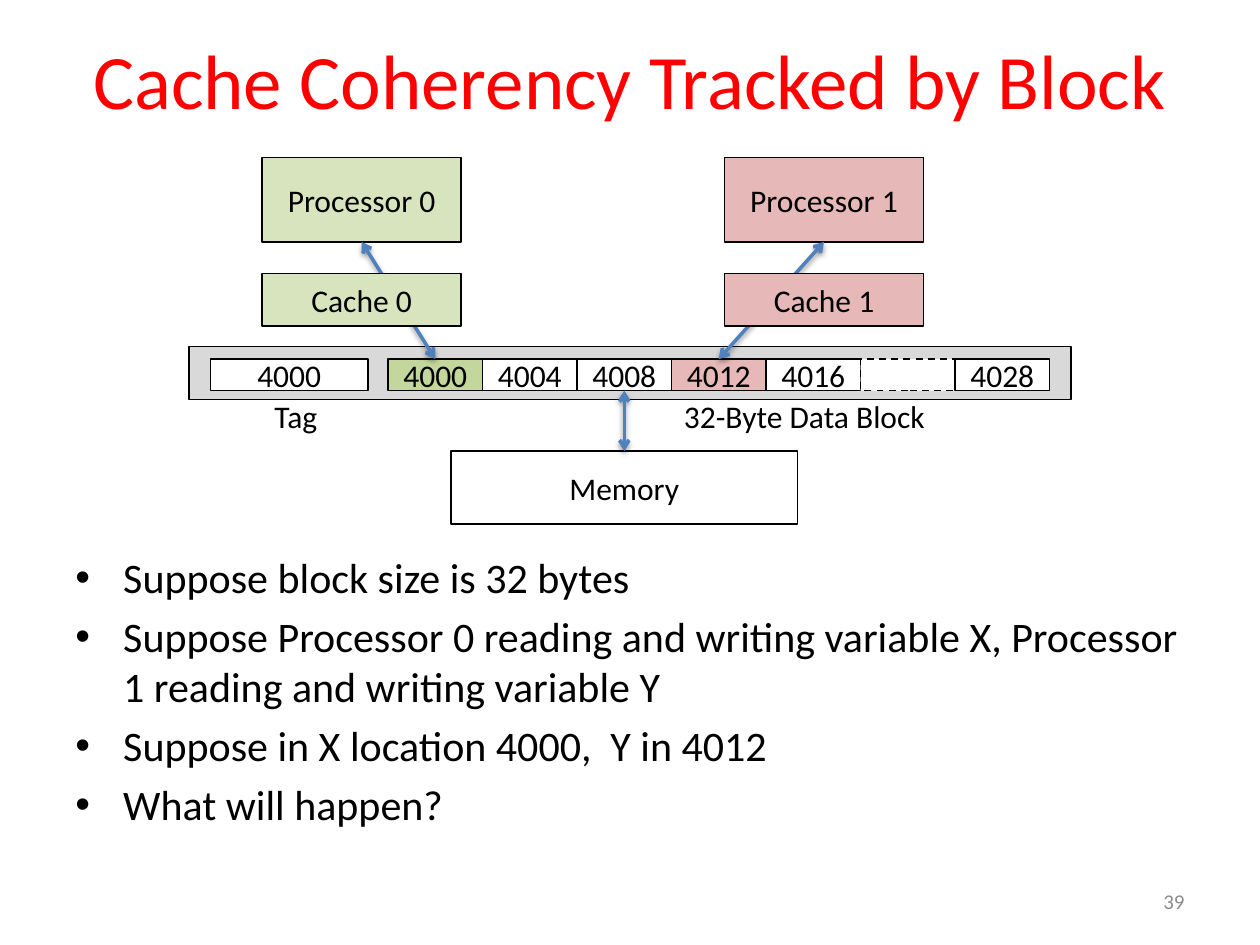
from dataclasses import dataclass
from typing import Optional

from lxml import etree
from pptx import Presentation
from pptx import util as u
from pptx.dml.color import RGBColor
from pptx.enum import dml, shapes, text
from pptx.oxml import parse_xml
from pptx.oxml.ns import nsdecls, qn


@dataclass(frozen=True)
class Theme:
    font: str = "Calibri"
    title_size: int = 44
    body_size: int = 24
    label_size: int = 18
    number_size: int = 12
    title: str = "FF0000"
    ink: str = "000000"
    number: str = "8C8C8C"
    paper: str = "FFFFFF"
    block: str = "D9D9D9"
    green: str = "D7E4BD"
    dark_green: str = "C3D69B"
    red: str = "E6B9B8"
    arrow: str = "4F81BD"


@dataclass(frozen=True)
class Box:
    left: float
    top: float
    width: float
    height: float
    fill: str
    label: str = ""
    dashed: bool = False


@dataclass(frozen=True)
class Label:
    left: float
    top: float
    width: float
    height: float
    lines: tuple[str, ...]
    size: int
    color: str
    align: text.PP_ALIGN = text.PP_ALIGN.LEFT
    anchor: text.MSO_ANCHOR = text.MSO_ANCHOR.TOP
    wrap: bool = True
    bullets: bool = False


@dataclass(frozen=True)
class Arrow:
    x1: float
    y1: float
    x2: float
    y2: float


THEME = Theme()
CORE_LEFTS = (2.08, 5.75)
CORE_FILLS = (THEME.green, THEME.red)
CORE_WIDTH = 1.58
PROCESSOR_TOP, PROCESSOR_HEIGHT = 1.25, 0.67
WORD_LEFT, WORD_TOP, WORD_WIDTH, WORD_HEIGHT = 3.08, 2.85, 0.75, 0.25
WORDS = ("4000", "4004", "4008", "4012", "4016", "", "4028")
WORD_FILLS = {"4000": THEME.dark_green, "4012": THEME.red}
SHARED_WORDS = (0, 3)
MEMORY_TOP = 3.58
BULLETS = (
    "Suppose block size is 32 bytes",
    "Suppose Processor 0 reading and writing variable X, Processor 1 reading and writing variable Y",
    "Suppose in X location 4000,  Y in 4012",
    "What will happen?",
)


def add_run(paragraph, content: str, size: int, color: str) -> None:
    run = paragraph.add_run()
    run.text = content
    run.font.name = THEME.font
    run.font.size = u.Pt(size)
    run.font.color.rgb = RGBColor.from_string(color)


def add_bullet(paragraph) -> None:
    properties = paragraph._p.get_or_add_pPr()
    properties.set("marL", str(u.Inches(0.38)))
    properties.set("indent", str(u.Inches(-0.38)))
    spacing = etree.SubElement(properties, qn("a:spcBef"))
    etree.SubElement(spacing, qn("a:spcPct"), val="20000")
    etree.SubElement(properties, qn("a:buFont"), typeface="Arial")
    etree.SubElement(properties, qn("a:buChar"), char="•")


def draw_box(slide, box: Box) -> None:
    shape = slide.shapes.add_shape(
        shapes.MSO_SHAPE.RECTANGLE,
        u.Inches(box.left), u.Inches(box.top), u.Inches(box.width), u.Inches(box.height),
    )
    shape.shadow.inherit = False
    shape.fill.solid()
    shape.fill.fore_color.rgb = RGBColor.from_string(box.fill)
    shape.line.color.rgb = RGBColor.from_string(THEME.ink)
    shape.line.width = u.Pt(1)
    if box.dashed:
        shape.line.dash_style = dml.MSO_LINE.DASH
    if box.label:
        shape.text_frame.vertical_anchor = text.MSO_ANCHOR.MIDDLE
        paragraph = shape.text_frame.paragraphs[0]
        paragraph.alignment = text.PP_ALIGN.CENTER
        add_run(paragraph, box.label, THEME.label_size, THEME.ink)


def draw_label(slide, label: Label) -> None:
    shape = slide.shapes.add_textbox(
        u.Inches(label.left), u.Inches(label.top), u.Inches(label.width), u.Inches(label.height)
    )
    frame = shape.text_frame
    frame.word_wrap = label.wrap
    frame.vertical_anchor = label.anchor
    for index, line in enumerate(label.lines):
        paragraph = frame.add_paragraph() if index else frame.paragraphs[0]
        paragraph.alignment = label.align
        if label.bullets:
            add_bullet(paragraph)
        add_run(paragraph, line, label.size, label.color)


def draw_arrow(slide, arrow: Arrow) -> None:
    connector = slide.shapes.add_connector(
        shapes.MSO_CONNECTOR.STRAIGHT,
        u.Inches(arrow.x1), u.Inches(arrow.y1), u.Inches(arrow.x2), u.Inches(arrow.y2),
    )
    connector.line.color.rgb = RGBColor.from_string(THEME.arrow)
    connector.line.width = u.Pt(2)
    line = connector.line._get_or_add_ln()
    for end in ("a:headEnd", "a:tailEnd"):
        etree.SubElement(line, qn(end), type="arrow")
    connector._element.spPr.append(parse_xml(
        f'<a:effectLst {nsdecls("a")}>'
        f'<a:outerShdw blurRad="{u.Pt(3.1)}" dist="{u.Pt(1.6)}" dir="5400000" rotWithShape="0">'
        f'<a:srgbClr val="{THEME.ink}"><a:alpha val="38000"/></a:srgbClr>'
        '</a:outerShdw></a:effectLst>'
    ))


def draw_cores(slide, name: str, top: float, height: float) -> None:
    for index, (left, fill) in enumerate(zip(CORE_LEFTS, CORE_FILLS)):
        draw_box(slide, Box(left, top, CORE_WIDTH, height, fill, f"{name} {index}"))


def word_center(index: int) -> float:
    return WORD_LEFT + (index + 0.5) * WORD_WIDTH


def draw_diagram(slide) -> None:
    draw_cores(slide, "Processor", PROCESSOR_TOP, PROCESSOR_HEIGHT)
    draw_box(slide, Box(1.67, WORD_TOP, 1.25, WORD_HEIGHT, THEME.paper, "4000"))
    for index, word in enumerate(WORDS):
        left = WORD_LEFT + index * WORD_WIDTH
        fill = WORD_FILLS.get(word, THEME.paper)
        draw_box(slide, Box(left, WORD_TOP, WORD_WIDTH, WORD_HEIGHT, fill, word, not word))
    word_bottom = WORD_TOP + WORD_HEIGHT
    for left, width, caption in ((2.08, 0.54, "Tag"), (5.33, 2.14, "32-Byte Data Block")):
        draw_label(slide, Label(left, word_bottom, width, 0.4, (caption,),
                                THEME.label_size, THEME.ink, wrap=False))
    for left, word in zip(CORE_LEFTS, SHARED_WORDS):
        draw_arrow(slide, Arrow(left + CORE_WIDTH / 2, PROCESSOR_TOP + PROCESSOR_HEIGHT,
                                word_center(word), WORD_TOP))
    draw_cores(slide, "Cache", 2.17, 0.42)
    draw_box(slide, Box(3.58, MEMORY_TOP, 2.75, 0.58, THEME.paper, "Memory"))
    draw_arrow(slide, Arrow(word_center(2), word_bottom, word_center(2), MEMORY_TOP))


def main() -> None:
    presentation = Presentation()
    presentation.slide_width = u.Inches(10)
    presentation.slide_height = u.Inches(7.5)
    slide = presentation.slides.add_slide(presentation.slide_layouts[6])
    middle = text.MSO_ANCHOR.MIDDLE
    draw_box(slide, Box(1.5, 2.75, 7, 0.42, THEME.block))
    draw_label(slide, Label(0.5, 0, 9, 1.25, ("Cache Coherency Tracked by Block",),
                            THEME.title_size, THEME.title, text.PP_ALIGN.CENTER, middle))
    draw_label(slide, Label(0.5, 4.33, 9, 2.52, BULLETS,
                            THEME.body_size, THEME.ink, bullets=True))
    draw_label(slide, Label(7.17, 6.95, 2.33, 0.4, ("39",),
                            THEME.number_size, THEME.number, text.PP_ALIGN.RIGHT, middle))
    draw_diagram(slide)
    presentation.save("out.pptx")


if __name__ == "__main__":
    main()
